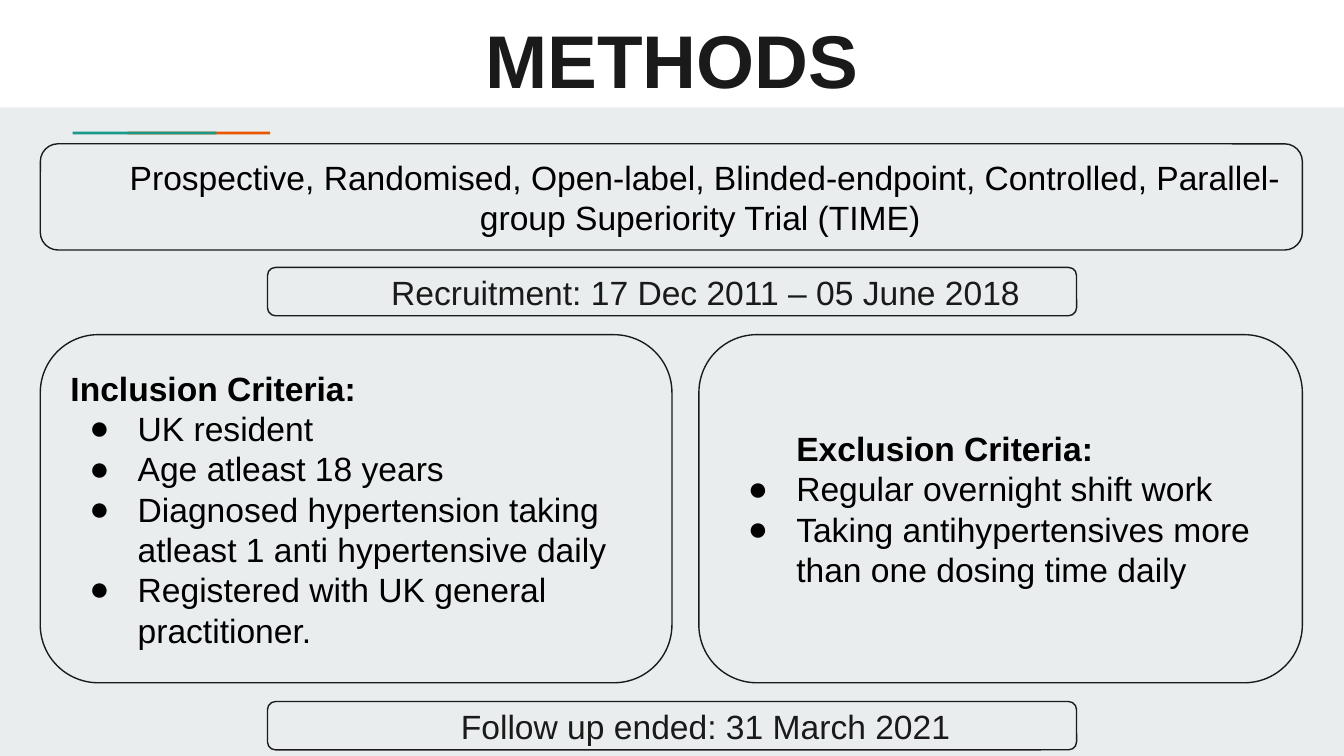
"""Build the METHODS slide of a clinical trial presentation."""
from lxml.etree import SubElement
from pptx import Presentation
from pptx.dml.color import RGBColor
from pptx.enum.shapes import MSO_SHAPE
from pptx.enum.text import MSO_ANCHOR, PP_ALIGN
from pptx.oxml.ns import qn
from pptx.util import Inches, Pt

INK, BLACK, PALE = "1A1A1A", "000000", "E9EDEE"


def paint(color_format, color):
    color_format.rgb = RGBColor.from_string(color)


def add_block(kind, left, top, width, height, fill):
    block = page.shapes.add_shape(
        kind, Inches(left), Inches(top), Inches(width), Inches(height))
    block.shadow.inherit = False
    block.fill.solid()
    paint(block.fill.fore_color, fill)
    block.line.fill.background()
    return block


deck = Presentation()
deck.slide_width = Inches(10)
deck.slide_height = deck.slide_width * 9 // 16
page = deck.slides.add_slide(deck.slide_layouts[0])
page.background.fill.solid()
paint(page.background.fill.fore_color, PALE)

title, subtitle = page.placeholders
subtitle._element.getparent().remove(subtitle._element)
add_block(MSO_SHAPE.RECTANGLE, 0, 0, 10, 0.8, "FFFFFF")
add_block(MSO_SHAPE.RECTANGLE, 0.95, 0.98, 1.06, 0.02, "EB5600")
add_block(MSO_SHAPE.RECTANGLE, 0.54, 0.98, 1.07, 0.02, "1A9988")
page.shapes._spTree.append(title._element)

title.left, title.top = Inches(0.8), Inches(-0.01)
title.width, title.height = Inches(8.4), Inches(0.9)
title.text_frame.text = "METHODS"
title.text_frame.vertical_anchor = MSO_ANCHOR.MIDDLE
heading = title.text_frame.paragraphs[0]
heading.alignment = PP_ALIGN.CENTER
heading.font.name, heading.font.size, heading.font.bold = "Arial", Pt(40), True
paint(heading.font.color, INK)

CENTERED, HEADING, INDENTED_HEADING, BULLET = range(4)
panels = [
    (0.3, 1.07, 9.39, 0.79, BLACK, [
        (CENTERED, "Prospective, Randomised, Open-label, Blinded-endpoint, "
                   "Controlled, Parallel-group Superiority Trial (TIME) ")]),
    (1.99, 1.99, 6.02, 0.36, INK, [
        (CENTERED, "Recruitment: 17 Dec 2011 – 05 June 2018")]),
    (0.3, 2.49, 4.7, 2.59, BLACK, [
        (HEADING, "Inclusion Criteria:"),
        (BULLET, "UK resident"),
        (BULLET, "Age atleast 18 years"),
        (BULLET, "Diagnosed hypertension taking atleast 1 anti hypertensive daily"),
        (BULLET, "Registered with UK general practitioner.")]),
    (5.2, 2.49, 4.49, 2.59, BLACK, [
        (INDENTED_HEADING, "Exclusion Criteria:"),
        (BULLET, "Regular overnight shift work"),
        (BULLET, "Taking antihypertensives more than one dosing time daily")]),
    (1.99, 5.22, 6.02, 0.36, INK, [
        (CENTERED, "Follow up ended: 31 March 2021")]),
]

for left, top, width, height, color, lines in panels:
    panel = add_block(MSO_SHAPE.ROUNDED_RECTANGLE, left, top, width, height, PALE)
    paint(panel.line.color, INK)
    panel.line.width = Pt(0.75)
    frame = panel.text_frame
    frame.word_wrap = True
    frame.vertical_anchor = MSO_ANCHOR.MIDDLE
    frame.margin_left = frame.margin_right = Inches(0.1)
    frame.margin_top = frame.margin_bottom = Inches(0.1)
    for number, (style, text) in enumerate(lines):
        para = frame.add_paragraph() if number else frame.paragraphs[0]
        para.text = text
        para.alignment = PP_ALIGN.CENTER if style == CENTERED else PP_ALIGN.LEFT
        properties = para._p.get_or_add_pPr()
        if style != HEADING:
            properties.set("marL", str(Inches(0.5)))
        if style == BULLET:
            properties.set("indent", str(Inches(-0.36)))
            bullet_color = SubElement(properties, qn("a:buClr"))
            SubElement(bullet_color, qn("a:srgbClr"), val=BLACK)
            SubElement(properties, qn("a:buFont"), typeface="Arial")
            SubElement(properties, qn("a:buChar"), char="●")
        para.font.name, para.font.size = "Arial", Pt(18)
        para.font.bold = style in (HEADING, INDENTED_HEADING)
        paint(para.font.color, color)

deck.save("out.pptx")
